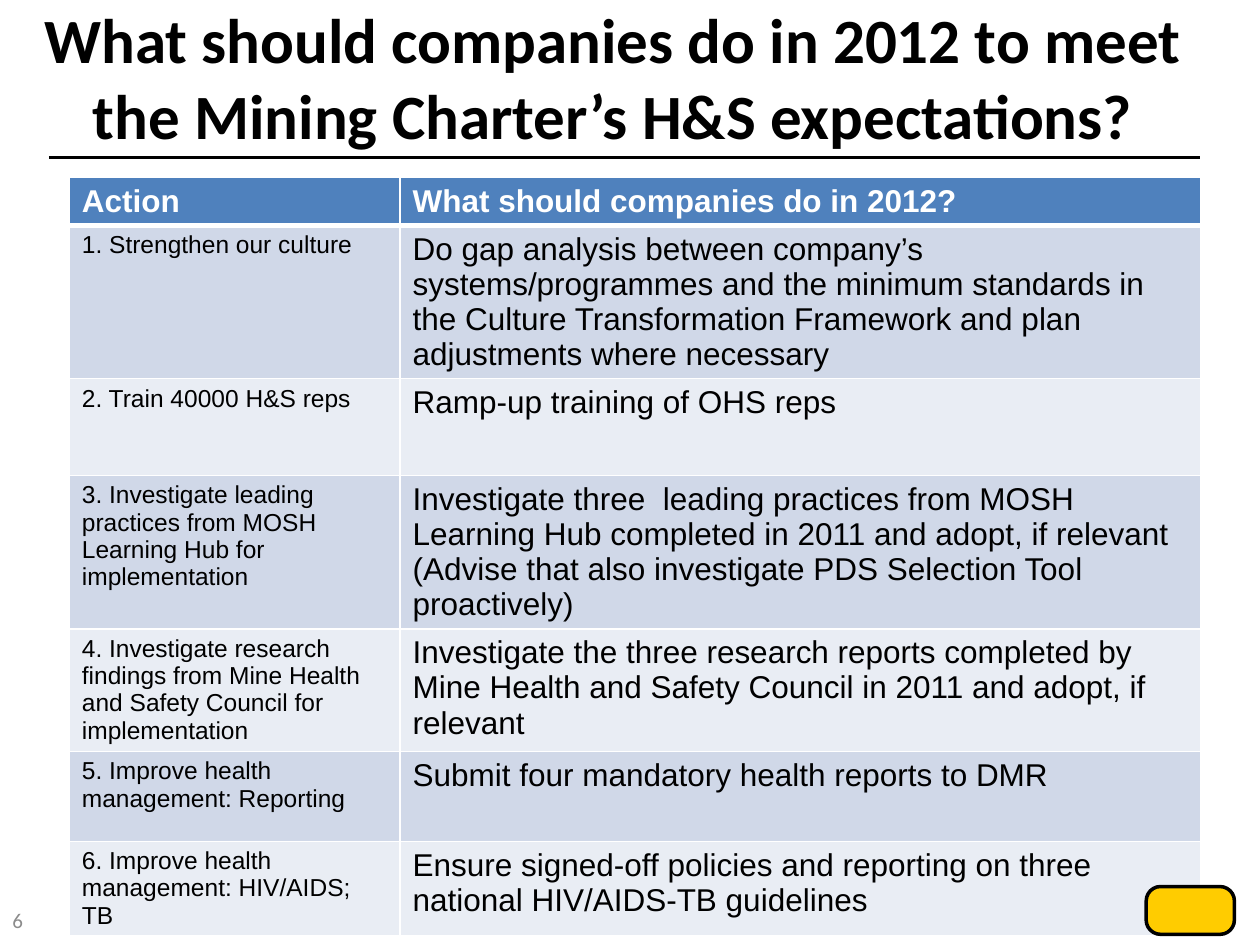
import pptx
import pptx.util
import pptx.dml.color
import pptx.enum.shapes
import pptx.enum.text
import pptx.oxml

Pt = pptx.util.Pt
RGB = pptx.dml.color.RGBColor
BLACK = RGB(0, 0, 0)
WHITE = RGB(255, 255, 255)
GRAY = RGB(0x8C, 0x8C, 0x8C)
BLUE = RGB(0x4F, 0x81, 0xBD)
BANDS = [RGB(0xD0, 0xD8, 0xE8), RGB(0xE9, 0xED, 0xF4)]
GOLD = RGB(0xFF, 0xCC, 0)
NS = 'xmlns:a="http://schemas.openxmlformats.org/drawingml/2006/main"'

ROWS = [
    ("Action", "What should companies do in 2012?"),
    ("1. Strengthen our culture",
     "Do gap analysis between company’s systems/programmes and the minimum standards in "
     "the Culture Transformation Framework and plan adjustments where necessary"),
    ("2. Train 40000 H&S reps", "Ramp-up training of OHS reps"),
    ("3. Investigate leading practices from MOSH Learning Hub for implementation",
     "Investigate three  leading practices from MOSH Learning Hub completed in 2011 and "
     "adopt, if relevant (Advise that also investigate PDS Selection Tool proactively)"),
    ("4. Investigate research findings from Mine Health and Safety Council for implementation",
     "Investigate the three research reports completed by Mine Health and Safety Council "
     "in 2011 and adopt, if relevant"),
    ("5. Improve health management: Reporting",
     "Submit four mandatory health reports to DMR"),
    ("6. Improve health management: HIV/AIDS; TB",
     "Ensure signed-off policies and reporting on three national HIV/AIDS-TB guidelines"),
]
WIDTHS = [189, 457.5]
HEIGHTS = [27.4, 87.6, 55.4, 87.6, 70, 51.4, 54.2]


def write(frame, text, face, size, color, bold=False):
    frame.text = text
    para = frame.paragraphs[0]
    font = para.runs[0].font
    font.name = face
    font.size = Pt(size)
    font.color.rgb = color
    font.bold = bold
    return para


def add_text(slide, box, text, size, color, bold=False):
    frame = slide.shapes.add_textbox(*map(Pt, box)).text_frame
    frame.word_wrap = True
    frame.vertical_anchor = pptx.enum.text.MSO_ANCHOR.MIDDLE
    return write(frame, text, "Calibri", size, color, bold)


def add_title(slide, box):
    left, top, width, height = box
    para = add_text(
        slide, box,
        "What should companies do in 2012 to meet the Mining Charter’s H&S expectations?",
        36, BLACK, True)
    para.alignment = pptx.enum.text.PP_ALIGN.CENTER
    base = Pt(top + height + 3)
    rule = slide.shapes.add_connector(
        pptx.enum.shapes.MSO_CONNECTOR.STRAIGHT,
        Pt(left + 11.5), base, Pt(left + width + 1.5), base)
    rule.line.color.rgb = BLACK
    rule.line.width = Pt(2.25)
    rule._element.spPr.append(pptx.oxml.parse_xml(f"<a:effectLst {NS}/>"))


def underline(cell):
    cell._tc.get_or_add_tcPr().insert(0, pptx.oxml.parse_xml(
        f'<a:lnB {NS} w="{Pt(3)}"><a:solidFill><a:srgbClr val="{WHITE}"/>'
        '</a:solidFill></a:lnB>'))


def add_grid(slide, box):
    table = slide.shapes.add_table(len(ROWS), len(WIDTHS), *map(Pt, box)).table
    for col, width in zip(table.columns, WIDTHS):
        col.width = Pt(width)
    for r, (row, height) in enumerate(zip(ROWS, HEIGHTS)):
        table.rows[r].height = Pt(height)
        head = r == 0
        for c, text in enumerate(row):
            cell = table.cell(r, c)
            cell.fill.solid()
            cell.fill.fore_color.rgb = BLUE if head else BANDS[(r - 1) % 2]
            size = 18 if head or c else 14
            para = write(cell.text_frame, text, "Arial", size,
                         WHITE if head else BLACK, head)
            para.line_spacing = Pt(round(size * 1.117, 1))
            if head:
                underline(cell)


def add_badge(slide, box):
    badge = slide.shapes.add_shape(
        pptx.enum.shapes.MSO_SHAPE.ROUNDED_RECTANGLE, *map(Pt, box))
    badge.adjustments[0] = 0.3
    badge.shadow.inherit = False
    badge.fill.solid()
    badge.fill.fore_color.rgb = GOLD
    badge.line.color.rgb = BLACK
    badge.line.width = Pt(2)


def main():
    deck = pptx.Presentation()
    deck.slide_width, deck.slide_height = Pt(720), Pt(540)
    slide = deck.slides.add_slide(deck.slide_layouts[6])
    add_title(slide, (16.5, 0, 667.5, 87))
    add_grid(slide, (39.6, 101.4, sum(WIDTHS), sum(HEIGHTS)))
    add_badge(slide, (655, 506.6, 50.4, 27.3))
    add_text(slide, (0, 511.2, 167.8, 28.8), "6", 12, GRAY)
    deck.save("out.pptx")


if __name__ == "__main__":
    main()
